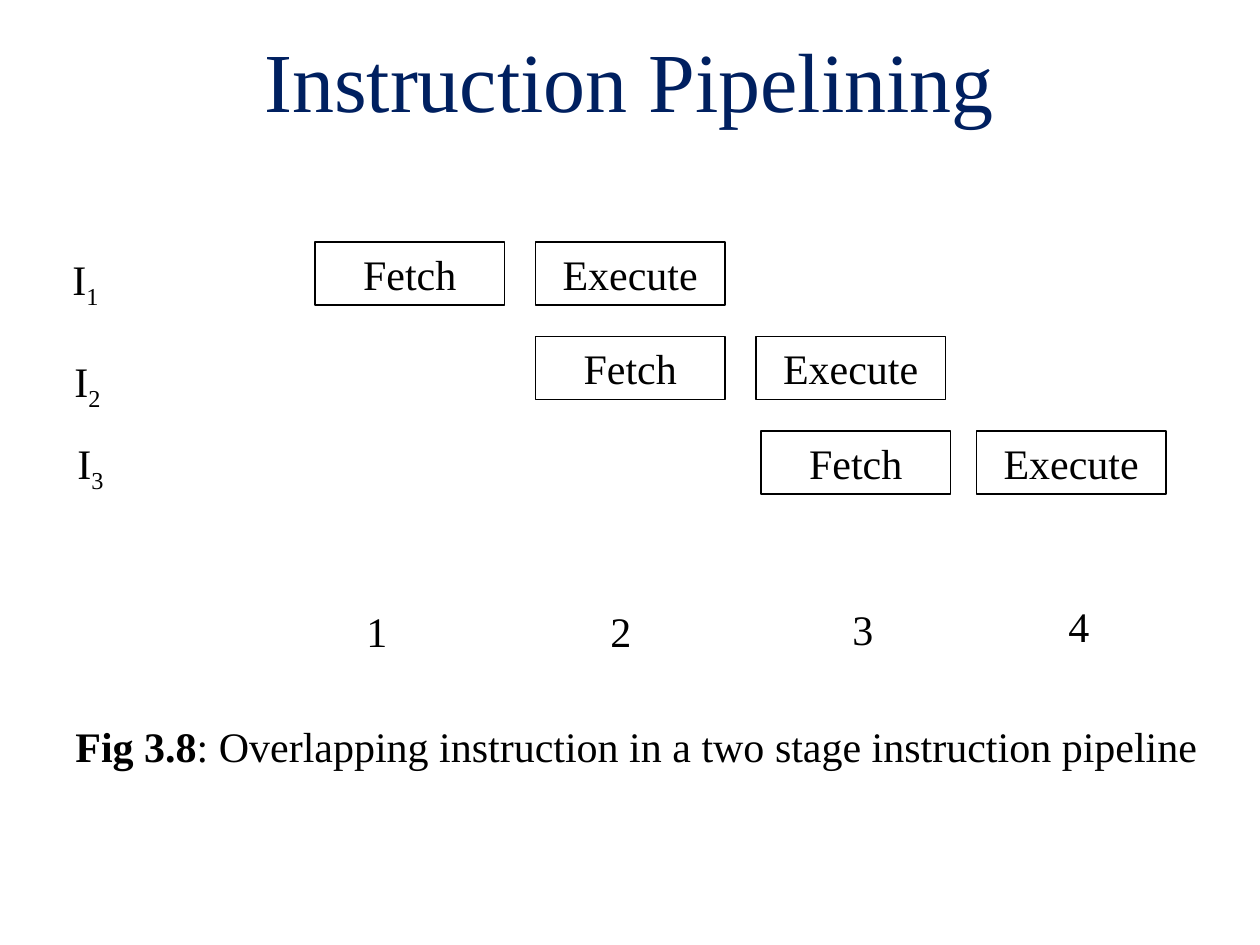
import pptx
import pptx.dml.color
import pptx.enum.shapes
import pptx.enum.text
import pptx.util

PX_PER_INCH = 126
FONT = "Times New Roman"
BLACK, WHITE, NAVY = "000000", "FFFFFF", "002060"
CENTER = pptx.enum.text.PP_ALIGN.CENTER
MIDDLE = pptx.enum.text.MSO_ANCHOR.MIDDLE


def px(length):
    return pptx.util.Emu(round(length * 914400 / PX_PER_INCH))


def color(hex_value):
    return pptx.dml.color.RGBColor.from_string(hex_value)


def style(paragraph, size=24, ink=BLACK):
    paragraph.font.name = FONT
    paragraph.font.size = pptx.util.Pt(size)
    paragraph.font.color.rgb = color(ink)


def add_words(slide, box, *words, wrap=False):
    label = slide.shapes.add_textbox(*map(px, box))
    label.text_frame.word_wrap = wrap
    paragraph = label.text_frame.paragraphs[0]
    for word in words:
        paragraph.add_run().text = word
    style(paragraph)
    return label.text_frame


def add_title(slide, box, wording):
    title = add_words(slide, box, wording, wrap=True)
    title.vertical_anchor = MIDDLE
    title.paragraphs[0].alignment = CENTER
    style(title.paragraphs[0], 48, NAVY)


def add_stage(slide, box, wording):
    stage = slide.shapes.add_shape(
        pptx.enum.shapes.MSO_SHAPE.RECTANGLE, *map(px, box))
    stage.shadow.inherit = False
    stage.fill.solid()
    stage.fill.fore_color.rgb = color(WHITE)
    stage.line.color.rgb = color(BLACK)
    stage.line.width = pptx.util.Pt(0.75)
    stage.text_frame.word_wrap = False
    stage.text_frame.vertical_anchor = MIDDLE
    paragraph = stage.text_frame.paragraphs[0]
    paragraph.text = wording
    paragraph.alignment = CENTER
    style(paragraph)


def add_pipeline(slide, box):
    left, top, width, height = box
    column_step, row_step = 278, 94.5
    stage_width, stage_height = width - 3 * column_step, height - 2 * row_step
    column_step = 220.5
    stage_width = width - 3 * column_step
    fetch_nudges = (0, 0, 5)
    for row, nudge in enumerate(fetch_nudges):
        for offset, wording, shift in ((0, "Fetch", nudge), (1, "Execute", 0)):
            stage_left = left + (row + offset) * column_step + shift
            add_stage(slide, (stage_left, top + row * row_step,
                              stage_width, stage_height), wording)


def add_instruction_labels(slide, box):
    left, top, width, height = box
    for number, (dx, dy) in enumerate(((0, 0), (2, 102), (5, 184)), 1):
        label = add_words(slide, (left + dx, top + dy, width, height),
                          "I", str(number))
        subscript = label.paragraphs[0].runs[1]
        subscript.font._element.set("baseline", "-25000")


def add_cycle_numbers(slide, box):
    left, top, width, height = box
    for number, (dx, dy) in enumerate(((0, 0), (244, 0), (486, -2), (702, -5)), 1):
        add_words(slide, (left + dx, top + dy, width, height), str(number))


def add_caption(slide, box):
    caption = add_words(
        slide, box, "Fig 3.8",
        ": Overlapping instruction in a two stage instruction pipeline", wrap=True)
    caption.paragraphs[0].runs[0].font.bold = True


def main():
    deck = pptx.Presentation()
    deck.slide_width, deck.slide_height = px(1260), px(945)
    slide = deck.slides.add_slide(deck.slide_layouts[6])
    add_pipeline(slide, (315, 242, 851, 252))
    add_instruction_labels(slide, (60, 247, 53, 63))
    add_cycle_numbers(slide, (354, 599, 47, 63))
    add_caption(slide, (63, 714, 1166, 63))
    add_title(slide, (94, 0, 1071, 158), "Instruction Pipelining")
    deck.save("out.pptx")


if __name__ == "__main__":
    main()
